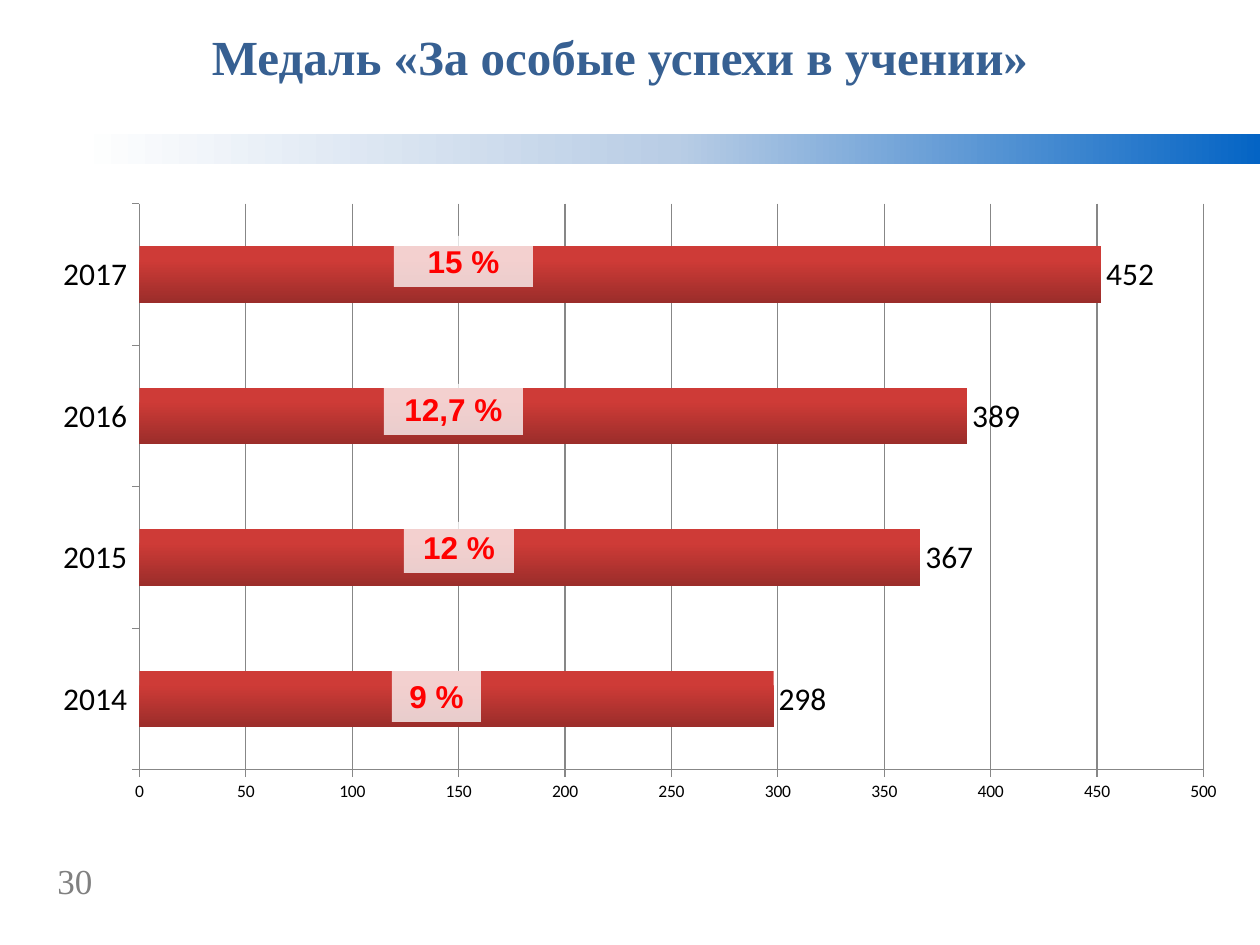
"""Builds the slide on school medals awarded in 2014-2017."""
from pptx import Presentation
from pptx.chart.data import CategoryChartData
from pptx.dml.color import RGBColor
from pptx.enum.chart import XL_CHART_TYPE, XL_LABEL_POSITION, XL_TICK_MARK
from pptx.enum.shapes import MSO_SHAPE
from pptx.enum.text import MSO_ANCHOR, PP_ALIGN
from pptx.oxml import parse_xml
from pptx.oxml.ns import nsdecls, qn
from pptx.oxml.xmlchemy import OxmlElement
from pptx.util import Pt

PX = 914400 // 126
COLORS = {
    "title": "376092", "number": "808080", "share": "FF0000", "plate": "FFFFFF",
    "text": "000000", "grid": "878787",
    "bar_top": "CE3B37", "bar_bottom": "9B2D2A",
    "strip_right": "0062C4", "strip_middle": "B9CDE5", "strip_left": "FFFFFF",
}


def write(frame, text, font_name, size, color, bold=False, align=PP_ALIGN.CENTER):
    frame.word_wrap = True
    frame.vertical_anchor = MSO_ANCHOR.TOP
    paragraph = frame.paragraphs[0]
    paragraph.alignment = align
    run = paragraph.add_run()
    run.text = text
    run.font.name = font_name
    run.font.size = Pt(size)
    run.font.bold = bold
    run.font.color.rgb = RGBColor.from_string(COLORS[color])


def paint_gradient(fill, element, stops, angle):
    fill.gradient()
    fill.gradient_angle = angle
    stop_list = next(element.iter(qn("a:gsLst")))
    for stop in list(stop_list):
        stop_list.remove(stop)
    for percent, color in stops:
        stop_list.append(parse_xml(
            f'<a:gs {nsdecls("a")} pos="{percent * 1000}">'
            f'<a:srgbClr val="{COLORS[color]}"/></a:gs>'))


presentation = Presentation()
presentation.slide_width = 1260 * PX
presentation.slide_height = 945 * PX
slide = presentation.slides.add_slide(presentation.slide_layouts[5])

title = slide.shapes.title
title.left, title.top, title.width, title.height = 0, 20 * PX, 1240 * PX, 72 * PX
write(title.text_frame, "Медаль «За особые успехи в учении»", "Times New Roman", 28, "title", True)

medals = CategoryChartData()
medals.categories = ["2014", "2015", "2016", "2017"]
medals.add_series("Series 1", (298, 367, 389, 452))
chart = slide.shapes.add_chart(
    XL_CHART_TYPE.BAR_CLUSTERED, 35 * PX, 155 * PX, 1201 * PX, 659 * PX, medals).chart
chart.has_legend = False
chart.has_title = False
chart.font.name = "Calibri"
chart.font.size = Pt(18)
chart.font.color.rgb = RGBColor.from_string(COLORS["text"])

plot = chart.plots[0]
plot.gap_width = 150
plot.vary_by_categories = False
plot.has_data_labels = True
plot.data_labels.show_value = True
plot.data_labels.position = XL_LABEL_POSITION.OUTSIDE_END
bars = plot.series[0]
paint_gradient(bars.format.fill, bars._element, [(0, "bar_top"), (25, "bar_top"), (100, "bar_bottom")], 270)

counts = chart.value_axis
counts.minimum_scale, counts.maximum_scale, counts.major_unit = 0, 500, 50
counts.tick_labels.font.size = Pt(10)
counts.has_major_gridlines = True
for axis in (counts, chart.category_axis):
    axis.major_tick_mark = XL_TICK_MARK.OUTSIDE
for line in (counts.format.line, chart.category_axis.format.line, counts.major_gridlines.format.line):
    line.width = Pt(0.75)
    line.color.rgb = RGBColor.from_string(COLORS["grid"])

plot_area = chart._chartSpace.chart.plotArea
for old_layout in plot_area.findall(qn("c:layout")):
    plot_area.remove(old_layout)
layout = OxmlElement("c:layout")
manual = OxmlElement("c:manualLayout")
layout.append(manual)
for tag, value in (("layoutTarget", "inner"), ("xMode", "edge"), ("yMode", "edge"),
                   ("x", "0.087"), ("y", "0.074"), ("w", "0.886"), ("h", "0.859")):
    setting = OxmlElement(f"c:{tag}")
    setting.set("val", value)
    manual.append(setting)
plot_area.insert(0, layout)

for share, left, top, width in (("9 %", 392, 671, 89), ("12 %", 404, 522, 110),
                                ("12,7 %", 384, 384, 139), ("15 %", 394, 236, 139)):
    plate = slide.shapes.add_shape(MSO_SHAPE.RECTANGLE, left * PX, top * PX, width * PX, 51 * PX)
    plate.shadow.inherit = False
    plate.line.fill.background()
    plate.fill.solid()
    plate.fill.fore_color.rgb = RGBColor.from_string(COLORS["plate"])
    alpha = OxmlElement("a:alpha")
    alpha.set("val", "76000")
    next(plate._element.spPr.iter(qn("a:srgbClr"))).append(alpha)
    write(plate.text_frame, share, "Arial", 18, "share", True)

page_number = slide.shapes.add_textbox(45 * PX, 853 * PX, 63 * PX, 55 * PX)
write(page_number.text_frame, "30", "Times New Roman", 20, "number", align=PP_ALIGN.LEFT)

strip = slide.shapes.add_shape(MSO_SHAPE.RECTANGLE, 77 * PX, 134 * PX, 1196 * PX, 30 * PX)
strip.shadow.inherit = False
strip.line.fill.background()
paint_gradient(strip.fill, strip._element.spPr,
               [(0, "strip_right"), (50, "strip_middle"), (100, "strip_left")], 180)

presentation.save("out.pptx")
